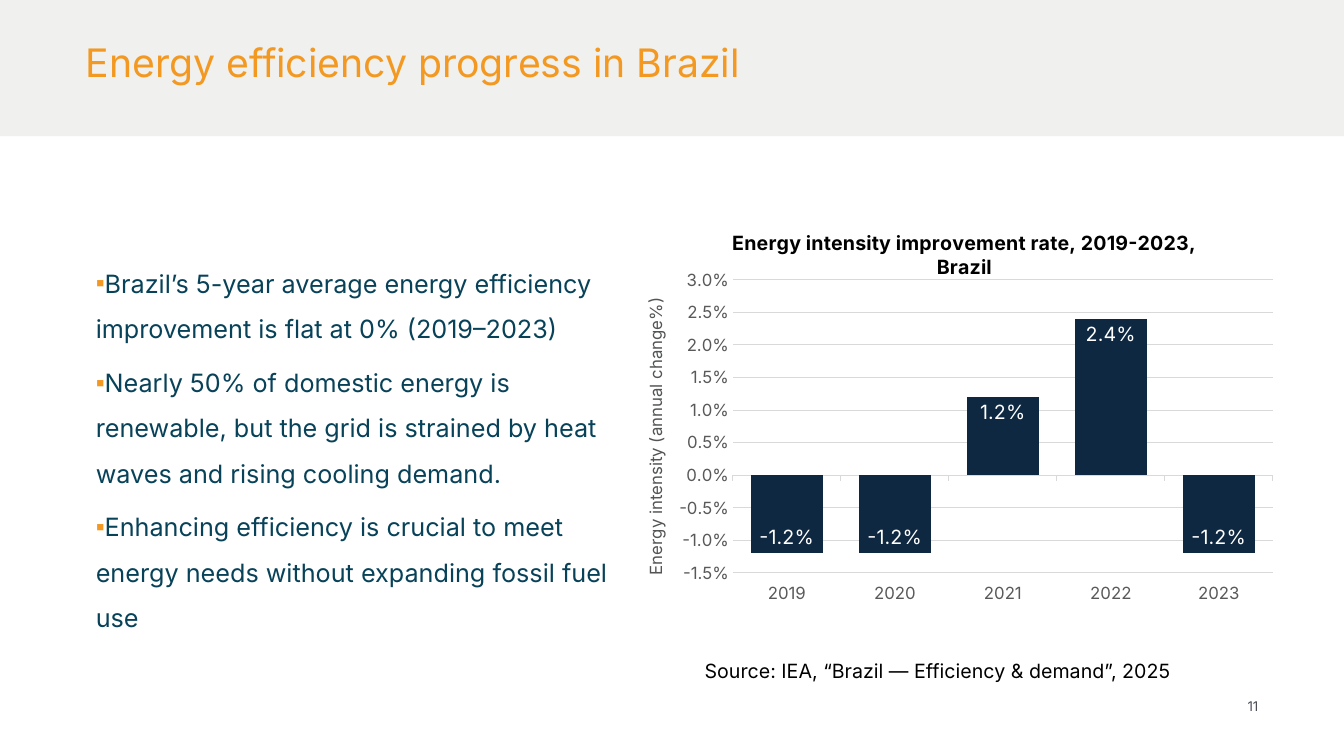
from dataclasses import dataclass

import lxml.etree
import pptx
import pptx.chart.data
import pptx.dml.color
import pptx.enum.chart
import pptx.enum.shapes
import pptx.enum.text
import pptx.oxml
import pptx.oxml.ns
import pptx.util

Inches = pptx.util.Inches
Align = pptx.enum.text.PP_ALIGN
Anchor = pptx.enum.text.MSO_ANCHOR
qn = pptx.oxml.ns.qn

FACE = "Inter"
AMBER = "F39922"
TEAL = "084259"
NAVY = "0E2841"
GREY = "595959"
RULE = "D9D9D9"
BLACK = "000000"

POINTS = [
    "Brazil’s 5-year average energy efficiency improvement is flat at 0% (2019–2023)",
    "Nearly 50% of domestic energy is renewable, but the grid is strained by heat "
    "waves and rising cooling demand.",
    "Enhancing efficiency is crucial to meet energy needs without expanding fossil fuel use",
]
RATES = {"2019": -0.012, "2020": -0.012, "2021": 0.012, "2022": 0.024, "2023": -0.012}


@dataclass
class Box:
    left: float
    top: float
    width: float
    height: float

    def place(self) -> tuple:
        return tuple(Inches(n) for n in (self.left, self.top, self.width, self.height))


@dataclass
class Note:
    text: str
    box: Box
    size: float
    color: str
    align: Align = Align.LEFT
    anchor: Anchor = Anchor.TOP
    inset: bool = True


NOTES = [
    Note("11", Box(11.34, 6.93, 1.14, 0.16), 9.5, "474C55", Align.RIGHT, Anchor.MIDDLE, False),
    Note("Source: IEA, “Brazil — Efficiency & demand”, 2025",
         Box(6.89, 6.49, 5.91, 0.34), 14, BLACK),
]
TITLE = Note("Energy efficiency progress in Brazil", Box(0.85, 0.43, 9.89, 0.42),
             28, AMBER, inset=False)


def rgb(code: str) -> pptx.dml.color.RGBColor:
    return pptx.dml.color.RGBColor.from_string(code)


def style(font: pptx.text.text.Font, size: float, color: str, bold: bool = False) -> None:
    font.name = FACE
    font.size = pptx.util.Pt(size)
    font.bold = bold
    font.color.rgb = rgb(color)


def move(shape, box: Box) -> None:
    shape.left, shape.top, shape.width, shape.height = box.place()


def write(shape, note: Note) -> None:
    frame = shape.text_frame
    frame.word_wrap = True
    frame.auto_size = pptx.enum.text.MSO_AUTO_SIZE.NONE
    frame.vertical_anchor = note.anchor
    if not note.inset:
        frame.margin_left = frame.margin_right = 0
        frame.margin_top = frame.margin_bottom = 0
    frame.text = note.text
    line = frame.paragraphs[0]
    line.alignment = note.align
    style(line.runs[0].font, note.size, note.color)


def add_band(slide) -> None:
    """Lay the pale header band behind everything else."""
    band = slide.shapes.add_shape(pptx.enum.shapes.MSO_SHAPE.RECTANGLE,
                                  *Box(0, 0, 13.33, 1.35).place())
    band.shadow.inherit = False
    band.line.fill.background()
    band.fill.solid()
    band.fill.fore_color.rgb = rgb("CECFCD")
    tint = band._element.spPr.find(".//" + qn("a:srgbClr"))
    lxml.etree.SubElement(tint, qn("a:alpha"), val="30000")
    band._element.getparent().insert(2, band._element)


def add_mark(line) -> None:
    """Give a paragraph its square bullet and tab stop."""
    props = line._p.get_or_add_pPr()
    props.set("marL", "0")
    props.set("indent", str(-Inches(0.31)))
    tint = lxml.etree.SubElement(props, qn("a:buClr"))
    lxml.etree.SubElement(tint, qn("a:srgbClr"), val=AMBER)
    lxml.etree.SubElement(props, qn("a:buChar"), char="▪")
    tabs = lxml.etree.SubElement(props, qn("a:tabLst"))
    lxml.etree.SubElement(tabs, qn("a:tab"), pos=str(Inches(0.38)), algn="l")


def add_list(shape) -> None:
    move(shape, Box(0.85, 2.46, 5.4, 4.42))
    frame = shape.text_frame
    frame.auto_size = pptx.enum.text.MSO_AUTO_SIZE.NONE
    frame.text = "\n".join(POINTS)
    for line in frame.paragraphs:
        add_mark(line)
        line.line_spacing = 1.5
        line.space_before = pptx.util.Pt(0)
        line.space_after = pptx.util.Pt(6)
        style(line.runs[0].font, 18, TEAL)


def name_part(title, text: str, size: float, color: str, bold: bool = False) -> None:
    """Set the title of a chart or an axis."""
    title.text_frame.text = text
    style(title.text_frame.paragraphs[0].runs[0].font, size, color, bold)


def fix_plot(chart, box: Box) -> None:
    """Pin the inner plot area to fractions of the chart."""
    area = chart._chartSpace.find(".//" + qn("c:plotArea"))
    for old in area.findall(qn("c:layout")):
        area.remove(old)
    layout = lxml.etree.Element(qn("c:layout"))
    area.insert(0, layout)
    frame = lxml.etree.SubElement(layout, qn("c:manualLayout"))
    rules = {"layoutTarget": "inner", "xMode": "edge", "yMode": "edge", "x": box.left,
             "y": box.top, "w": box.width, "h": box.height}
    for key, val in rules.items():
        lxml.etree.SubElement(frame, qn("c:" + key), val=str(val))


def draw_rule(line) -> None:
    line.color.rgb = rgb(RULE)
    line.width = pptx.util.Pt(0.75)


def add_graph(slide) -> None:
    kinds = pptx.enum.chart
    data = pptx.chart.data.CategoryChartData(number_format="0.0%")
    data.categories = list(RATES)
    data.add_series("Series 1", list(RATES.values()))
    chart = slide.shapes.add_chart(kinds.XL_CHART_TYPE.COLUMN_CLUSTERED,
                                   *Box(6.35, 2.11, 6.43, 3.92).place(), data).chart
    chart.font.name = "Lato"
    chart.font.size = pptx.util.Pt(10)
    chart.font.color.rgb = rgb(BLACK)
    chart.has_legend = False
    name_part(chart.chart_title, "Energy intensity improvement rate, 2019-2023, Brazil",
              14, BLACK, True)
    fix_plot(chart, Box(0.143, 0.17, 0.833, 0.742))

    years, scale = chart.category_axis, chart.value_axis
    for axis in (years, scale):
        style(axis.tick_labels.font, 12, GREY)
        axis.minor_tick_mark = kinds.XL_TICK_MARK.NONE
    years.tick_label_position = kinds.XL_TICK_LABEL_POSITION.LOW
    years.major_tick_mark = kinds.XL_TICK_MARK.OUTSIDE
    draw_rule(years.format.line)

    scale.minimum_scale, scale.maximum_scale, scale.major_unit = -0.015, 0.03, 0.005
    scale.major_tick_mark = kinds.XL_TICK_MARK.NONE
    scale.tick_labels.number_format = "0.0%"
    scale.tick_labels.number_format_is_linked = False
    scale.format.line.fill.background()
    draw_rule(scale.major_gridlines.format.line)
    name_part(scale.axis_title, "Energy intensity (annual change%)", 12, "535555")

    plot = chart.plots[0]
    plot.gap_width = 51
    plot.vary_by_categories = False
    bars = plot.series[0]
    bars.invert_if_negative = False
    bars.format.fill.solid()
    bars.format.fill.fore_color.rgb = rgb(NAVY)
    labels = bars.data_labels
    labels.show_value = True
    labels.position = kinds.XL_LABEL_POSITION.INSIDE_END
    labels.number_format = "0.0%"
    labels.number_format_is_linked = False
    style(labels.font, 14, "FFFFFF")


def main() -> None:
    deck = pptx.Presentation()
    deck.slide_width, deck.slide_height = Inches(13.33), Inches(7.5)
    slide = deck.slides.add_slide(deck.slide_layouts[1])
    add_band(slide)
    title = slide.shapes.title
    move(title, TITLE.box)
    write(title, TITLE)
    title.text_frame.paragraphs[0].line_spacing = 0.9
    add_list(slide.placeholders[1])
    for note in NOTES:
        write(slide.shapes.add_textbox(*note.box.place()), note)
    add_graph(slide)
    deck.save("out.pptx")


if __name__ == "__main__":
    main()
